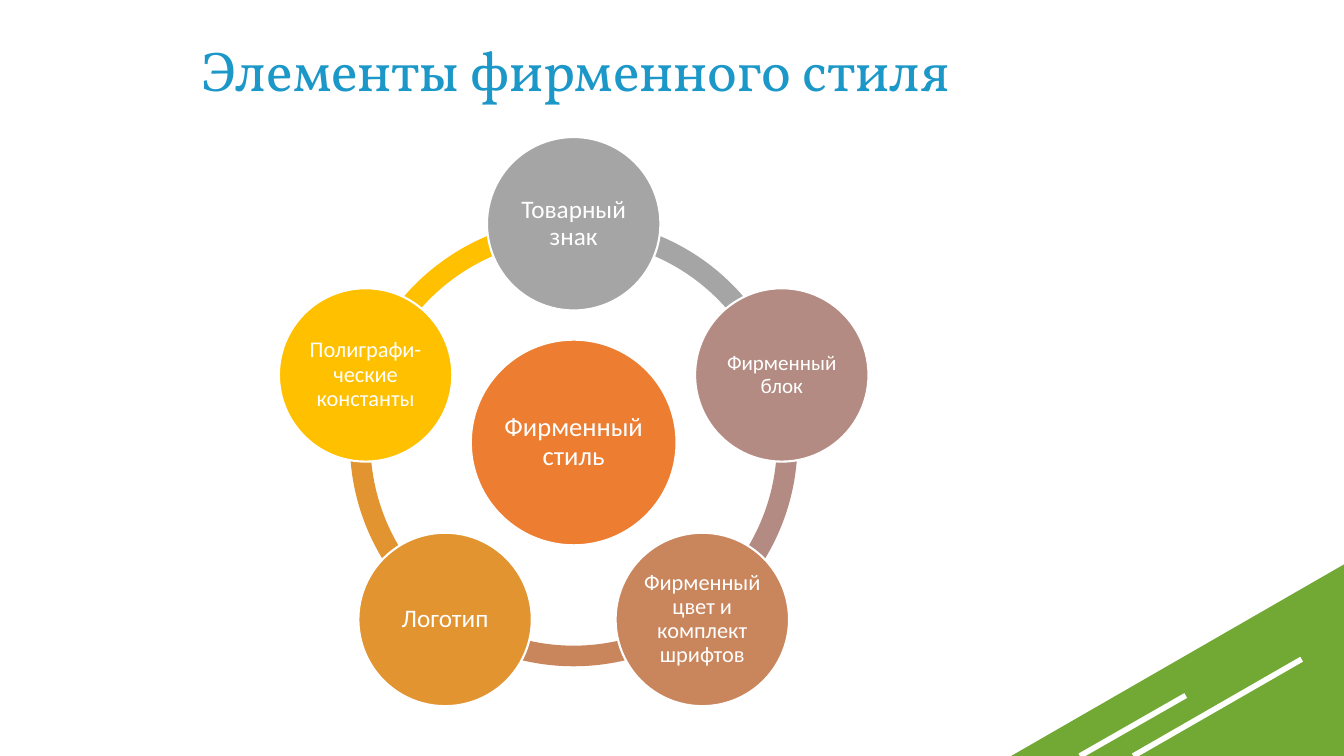
import math

import pptx
import pptx.dml.color
import pptx.enum.shapes
import pptx.enum.text
import pptx.oxml.ns
import pptx.util
from lxml import etree
from pptx.util import Inches

SHAPE = pptx.enum.shapes.MSO_SHAPE
ANCHOR = pptx.enum.text.MSO_ANCHOR
ALIGN = pptx.enum.text.PP_ALIGN
qn = pptx.oxml.ns.qn

WHITE = "FFFFFF"
RING_X, RING_Y = 5.69, 4.39
RING_SIZE, ORBIT = 4.44, 2.17
HUB_SIZE, ELEMENT_SIZE = 2.04, 1.72
# Clockwise from the top: label, font size, colour, text inset
ELEMENTS = [
    ("Товарный знак", 18, "A5A5A5", 0.03),
    ("Фирменный блок", 15, "B48B83", 0.02),
    ("Фирменный цвет и комплект шрифтов", 16, "C9855C", 0.02),
    ("Логотип", 18, "E19430", 0.03),
    ("Полиграфи-ческие константы", 16, "FFC000", 0.02),
]


def rgb(hex_colour):
    return pptx.dml.color.RGBColor.from_string(hex_colour)


class SlideBuilder:
    """Draws elements on one slide in a shared style."""

    heading_font = "Vollkorn"
    body_font = "Calibri"

    def __init__(self, slide):
        self.slide = slide

    def shape(self, preset, left, top, width, height, fill):
        shape = self.slide.shapes.add_shape(
            preset, Inches(left), Inches(top), Inches(width), Inches(height))
        shape.shadow.inherit = False
        shape.fill.solid()
        shape.fill.fore_color.rgb = rgb(fill)
        shape.line.fill.background()
        return shape

    def label(self, shape, text, size, font, colour, align, anchor, insets):
        """Put one paragraph in a shape; insets are left, top, right, bottom."""
        frame = shape.text_frame
        frame.word_wrap = True
        frame.vertical_anchor = anchor
        (frame.margin_left, frame.margin_top,
         frame.margin_right, frame.margin_bottom) = map(Inches, insets)
        paragraph = frame.paragraphs[0]
        paragraph.text = text
        paragraph.alignment = align
        paragraph.line_spacing = 0.9
        paragraph.font.name = font
        paragraph.font.size = pptx.util.Pt(size)
        paragraph.font.color.rgb = rgb(colour)

    def title(self, text):
        box = self.slide.shapes.add_textbox(
            Inches(2), Inches(0.4), Inches(9), Inches(0.63))
        self.label(box, text, 40, self.heading_font, "1B97C8",
                   ALIGN.LEFT, ANCHOR.BOTTOM, (0, 0.05, 0, 0))

    def circle(self, x, y, diameter, text, size, fill, inset):
        """Draw a labelled circle centred on x, y."""
        circle = self.shape(SHAPE.OVAL, x - diameter / 2, y - diameter / 2,
                            diameter, diameter, fill)
        circle.line.color.rgb = rgb(WHITE)
        circle.line.width = pptx.util.Pt(1.5)
        self.label(circle, text, size, self.body_font, WHITE,
                   ALIGN.CENTER, ANCHOR.MIDDLE, (inset,) * 4)

    def ring_arc(self, start, end, fill):
        """Draw a part of the ring; angles in degrees, clockwise from the right."""
        arc = self.shape(SHAPE.BLOCK_ARC, RING_X - RING_SIZE / 2,
                         RING_Y - RING_SIZE / 2, RING_SIZE, RING_SIZE, fill)
        # One degree is 0.6 in an angle adjustment
        arc.adjustments[0] = start % 360 * 0.6
        arc.adjustments[1] = end % 360 * 0.6
        arc.adjustments[2] = 0.046

    def corner(self, left, top, width, height, fill):
        triangle = self.shape(SHAPE.RIGHT_TRIANGLE, left, top, width, height, fill)
        triangle._element.spPr.find(qn("a:xfrm")).set("flipH", "1")

    def stripe(self, x1, y1, x2, y2):
        line = self.slide.shapes.add_connector(
            pptx.enum.shapes.MSO_CONNECTOR.STRAIGHT,
            Inches(x1), Inches(y1), Inches(x2), Inches(y2))
        line.line.color.rgb = rgb(WHITE)
        line.line.width = pptx.util.Pt(4)
        etree.SubElement(line._element.spPr, qn("a:effectLst"))


def main():
    deck = pptx.Presentation()
    deck.slide_width, deck.slide_height = Inches(13.33), Inches(7.5)
    builder = SlideBuilder(deck.slides.add_slide(deck.slide_layouts[6]))

    builder.corner(10.03, 5.6, 3.3, 1.9, "71A934")
    builder.stripe(10.71, 7.5, 11.76, 6.9)
    builder.stripe(11.24, 7.5, 12.91, 6.54)
    builder.title("Элементы фирменного стиля")

    step = 360 / len(ELEMENTS)
    angles = [270 + step * i for i in range(len(ELEMENTS))]
    for angle, (_, _, colour, _) in zip(angles, ELEMENTS):
        builder.ring_arc(angle, angle + step, colour)

    builder.circle(RING_X, RING_Y, HUB_SIZE, "Фирменный стиль", 19, "ED7D31", 0.03)
    for angle, (name, size, colour, inset) in zip(angles, ELEMENTS):
        x = RING_X + ORBIT * math.cos(math.radians(angle))
        y = RING_Y + ORBIT * math.sin(math.radians(angle))
        builder.circle(x, y, ELEMENT_SIZE, name, size, colour, inset)

    deck.save("out.pptx")


if __name__ == "__main__":
    main()
